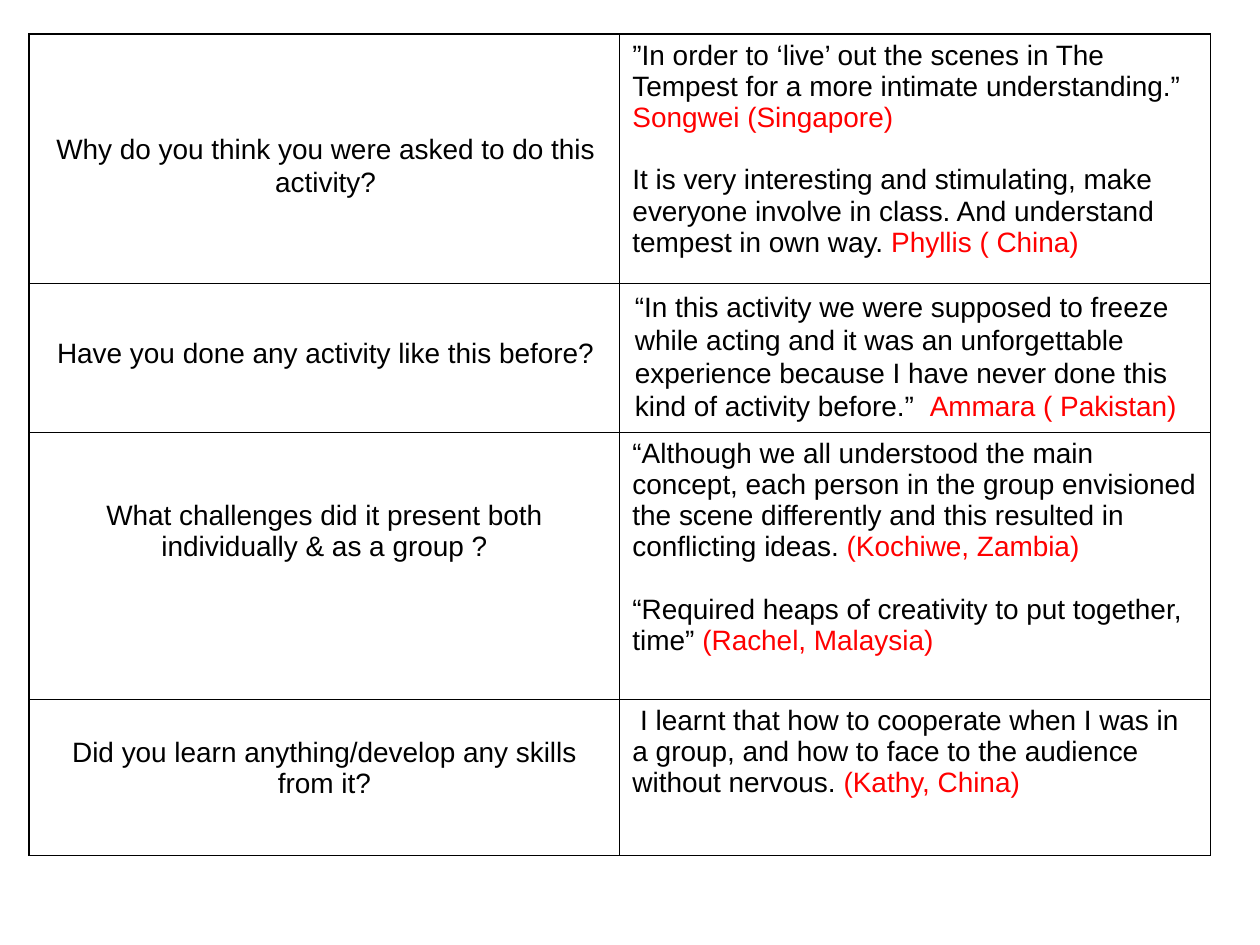
from dataclasses import dataclass

from lxml.etree import SubElement
from pptx import Presentation
from pptx.dml.color import RGBColor
from pptx.enum.text import PP_ALIGN
from pptx.oxml.ns import qn
from pptx.util import Inches, Pt


@dataclass(frozen=True)
class Theme:
    font: str = "Arial"
    size: float = 16
    text: str = "000000"
    name: str = "FF0000"
    paper: str = "FFFFFF"
    border: str = "000000"
    border_width: float = 0.75
    paragraph_gap: float = 17.8
    loose_spacing: float = 1.07


THEME = Theme()
COLUMN_WIDTHS = [4.69, 4.69]


@dataclass(frozen=True)
class Row:
    """One question; each answer paragraph is a list of (text, colour) spans."""
    height: float
    question: str
    question_top: float
    answers: list
    question_loose: bool = False
    answer_loose: bool = False


ROWS = [
    Row(1.98, "Why do you think you were asked to do this activity?", 0.78, [
        [("”In order to ‘live’ out the scenes in The Tempest for a more "
          "intimate understanding.”", THEME.text)],
        [("Songwei (Singapore)", THEME.name)],
        [("It is very interesting and stimulating, make everyone involve in class. "
          "And understand tempest in own way. ", THEME.text),
         ("Phyllis ( China)", THEME.name)],
    ], question_loose=True),
    Row(1.18, "Have you done any activity like this before?", 0.42, [
        [("“In this activity we were supposed to freeze while acting and it was an "
          "unforgettable experience because I have never done this kind of "
          "activity before.”  ", THEME.text),
         ("Ammara ( Pakistan)", THEME.name)],
    ], question_loose=True, answer_loose=True),
    Row(2.12, "What challenges did it present both individually & as a group ?", 0.54, [
        [("“Although we all understood the main concept, each person in the group "
          "envisioned the scene differently and this resulted in conflicting ideas. ",
          THEME.text),
         ("(Kochiwe, Zambia)", THEME.name)],
        [("“Required heaps of creativity to put together, time” ", THEME.text),
         ("(Rachel, Malaysia)", THEME.name)],
    ]),
    Row(1.24, "Did you learn anything/develop any skills from it?", 0.3, [
        [(" I learnt that how to cooperate when I was in a group, and how to face to "
          "the audience without nervous.", THEME.text),
         (" (Kathy, China)", THEME.name)],
    ]),
]


def write_paragraph(para, spans, theme, align=PP_ALIGN.LEFT, loose=False, before=0):
    para.alignment = align
    para.space_before = Pt(before)
    para.line_spacing = theme.loose_spacing if loose else 1.0
    for text, color in spans:
        span = para.add_run()
        span.text = text
        span.font.name = theme.font
        span.font.size = Pt(theme.size)
        span.font.color.rgb = RGBColor.from_string(color)


class SlideBuilder:
    def __init__(self, page, theme):
        self.page = page
        self.theme = theme

    def table(self, left, top, widths, heights):
        frame = self.page.shapes.add_table(
            len(heights), len(widths), Inches(left), Inches(top),
            Inches(sum(widths)), Inches(sum(heights)))
        table = frame.table
        table.first_row = False
        table.horz_banding = False
        for column, width in zip(table.columns, widths):
            column.width = Inches(width)
        for row, height in zip(table.rows, heights):
            row.height = Inches(height)
        return table

    def borders(self, cell):
        properties = cell._tc.get_or_add_tcPr()
        for side in ("a:lnL", "a:lnR", "a:lnT", "a:lnB"):
            line = SubElement(properties, qn(side), w=str(Pt(self.theme.border_width)))
            fill = SubElement(line, qn("a:solidFill"))
            SubElement(fill, qn("a:srgbClr"), val=self.theme.border)

    def cell(self, cell, paragraphs, top=0.05, loose=False, align=PP_ALIGN.LEFT):
        self.borders(cell)
        cell.fill.solid()
        cell.fill.fore_color.rgb = RGBColor.from_string(self.theme.paper)
        cell.margin_top = Inches(top)
        cell.margin_left = Inches(0.12 if loose else 0.1)
        for index, spans in enumerate(paragraphs):
            para = cell.text_frame.paragraphs[0] if index == 0 else cell.text_frame.add_paragraph()
            # A name standing alone stays close to its quotation.
            name_only = spans[0][1] == self.theme.name
            before = 0 if index == 0 or name_only else self.theme.paragraph_gap
            write_paragraph(para, spans, self.theme, align=align, loose=loose, before=before)


def main():
    deck = Presentation()
    deck.slide_width, deck.slide_height = Inches(10), Inches(7.5)
    page = deck.slides.add_slide(deck.slide_layouts[6])
    builder = SlideBuilder(page, THEME)
    table = builder.table(0.23, 0.27, COLUMN_WIDTHS, [row.height for row in ROWS])
    for index, row in enumerate(ROWS):
        builder.cell(table.cell(index, 0), [[(row.question, THEME.text)]],
                     top=row.question_top, loose=row.question_loose, align=PP_ALIGN.CENTER)
        builder.cell(table.cell(index, 1), row.answers, loose=row.answer_loose)
    deck.save("out.pptx")


if __name__ == "__main__":
    main()
